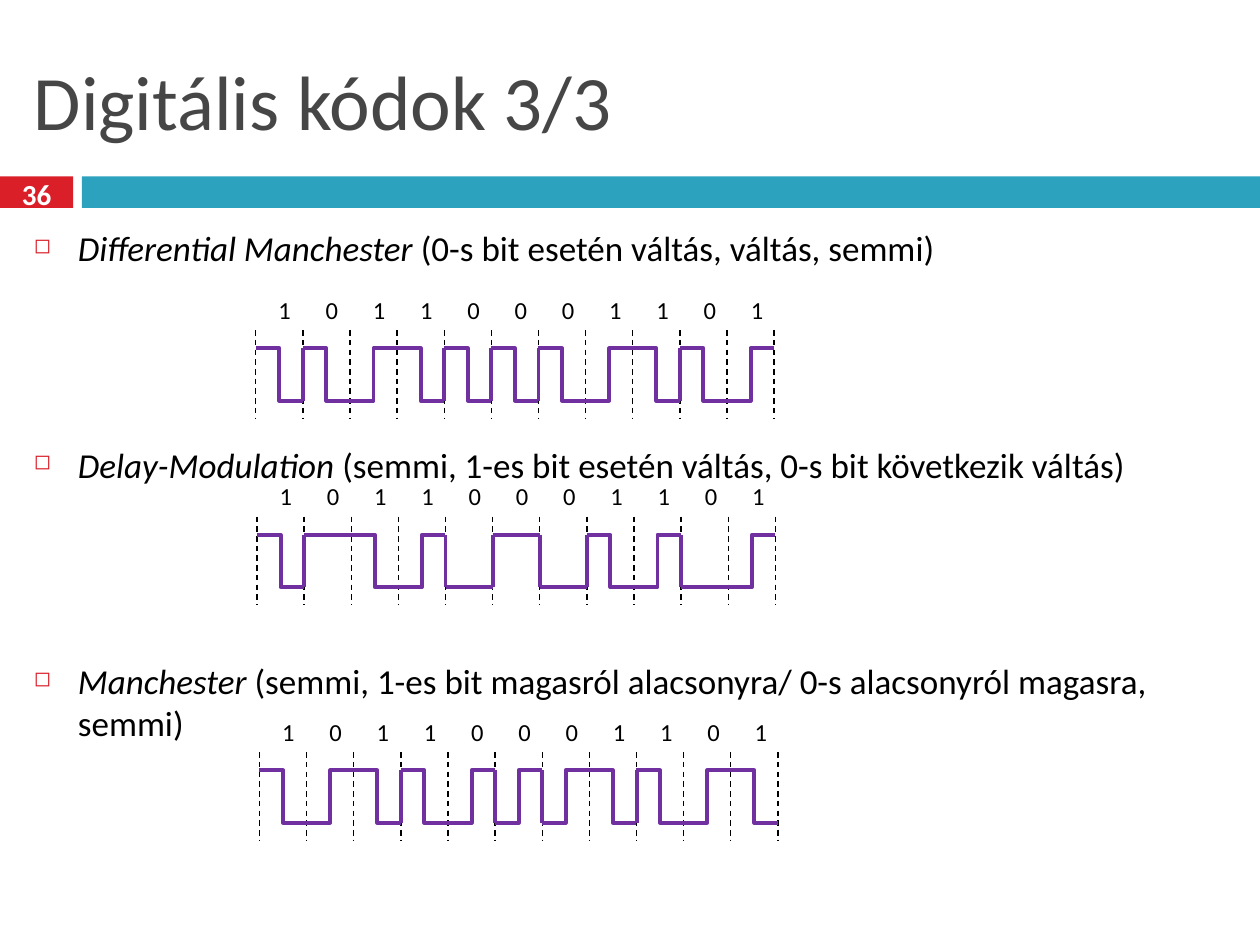
from lxml import etree
from pptx import Presentation
from pptx.dml.color import RGBColor
from pptx.enum.dml import MSO_LINE
from pptx.enum.shapes import MSO_CONNECTOR, MSO_SHAPE
from pptx.enum.text import MSO_ANCHOR, PP_ALIGN
from pptx.oxml.ns import qn
from pptx.util import Inches, Pt

STRAIGHT, ELBOW = MSO_CONNECTOR.STRAIGHT, MSO_CONNECTOR.ELBOW
RECTANGLE = MSO_SHAPE.RECTANGLE
DASH = MSO_LINE.DASH
TOP, MIDDLE = MSO_ANCHOR.TOP, MSO_ANCHOR.MIDDLE
LEFT, CENTER = PP_ALIGN.LEFT, PP_ALIGN.CENTER

BLACK = RGBColor(0x00, 0x00, 0x00)
WHITE = RGBColor(0xFF, 0xFF, 0xFF)
GREY = RGBColor(0x46, 0x46, 0x46)
RED = RGBColor(0xDA, 0x1F, 0x28)
TEAL = RGBColor(0x2D, 0xA2, 0xBF)
PURPLE = RGBColor(0x70, 0x30, 0xA0)

COLUMNS, ROWS = 100, 75
BITS = "10110001101"
BIT_WIDTH = 3.74
HIGH_ROW, LOW_ROW, CLOCK_ROWS = 1.45, 5.6, 6.95

CODES = [
    ("Differential Manchester", " (0-s bit esetén váltás, váltás, semmi)"),
    ("Delay-Modulation", " (semmi, 1-es bit esetén váltás, 0-s bit következik váltás)"),
    ("Manchester", " (semmi, 1-es bit magasról alacsonyra/ 0-s alacsonyról magasra, semmi)"),
]
# Left column, top row, then the level in the first and second half of each bit
SIGNALS = [
    (20.3, 26.2, "HL HL LH HL HL HL HL LH HL HL LH"),
    (20.4, 41.0, "HL HH HL LH LL HH LL HL LH LL LH"),
    (20.6, 59.7, "HL LH HL HL LH LH LH HL HL LH HL"),
]


class SlideBuilder:
    def __init__(self, deck):
        self.slide = deck.slides.add_slide(deck.slide_layouts[6])
        self.column = deck.slide_width / COLUMNS
        self.row = deck.slide_height / ROWS
        self.font = "Calibri"

    def place(self, *lengths):
        """Turn alternating columns and rows into slide units."""
        return [round(n * (self.row if i % 2 else self.column))
                for i, n in enumerate(lengths)]

    def bar(self, left, top, width, height, color):
        bar = self.slide.shapes.add_shape(RECTANGLE, *self.place(left, top, width, height))
        bar.shadow.inherit = False
        bar.fill.solid()
        bar.fill.fore_color.rgb = color
        bar.line.fill.background()

    def text_frame(self, left, top, width, height, anchor=TOP):
        box = self.slide.shapes.add_textbox(*self.place(left, top, width, height))
        box.text_frame.word_wrap = True
        box.text_frame.vertical_anchor = anchor
        return box.text_frame

    def run(self, paragraph, text, size, color=BLACK, bold=False, italic=False):
        run = paragraph.add_run()
        run.text = text
        font = run.font
        font.name, font.size, font.bold, font.italic = self.font, Pt(size), bold, italic
        font.color.rgb = color

    def label(self, box, text, size, color, align=LEFT, bold=False):
        paragraph = self.text_frame(*box, anchor=MIDDLE).paragraphs[0]
        paragraph.alignment = align
        self.run(paragraph, text, size, color, bold)

    def bullets(self, box, items, size, first_gap, gap):
        frame = self.text_frame(*box)
        for index, (name, rule) in enumerate(items):
            paragraph = frame.add_paragraph() if index else frame.paragraphs[0]
            paragraph.space_before = Pt(gap if index else first_gap)
            properties = paragraph._p.get_or_add_pPr()
            indent = round(3.5 * self.column)
            properties.set("marL", str(indent))
            properties.set("indent", str(-indent))
            bullet_color = etree.SubElement(properties, qn("a:buClr"))
            etree.SubElement(bullet_color, qn("a:srgbClr"), val=str(RED))
            etree.SubElement(properties, qn("a:buSzPct"), val="60000")
            etree.SubElement(properties, qn("a:buChar"), char="◻")
            self.run(paragraph, name, size, italic=True)
            self.run(paragraph, rule, size)

    def line(self, start, end, color, width, kind=STRAIGHT, dash=None):
        line = self.slide.shapes.add_connector(kind, *self.place(*start, *end))
        line.line.color.rgb = color
        line.line.width = Pt(width)
        if dash:
            line.line.dash_style = dash
        etree.SubElement(line._element.spPr, qn("a:effectLst"))

    def bit_labels(self, left, top):
        """Write the bits on one line, each centred on its own tab stop."""
        paragraph = self.text_frame(left, top, 44.8, 3.4).paragraphs[0]
        tabs = etree.SubElement(paragraph._p.get_or_add_pPr(), qn("a:tabLst"))
        for index in range(len(BITS)):
            stop = round((1.4 + index * 3.75) * self.column)
            etree.SubElement(tabs, qn("a:tab"), pos=str(stop), algn="ctr")
        self.run(paragraph, "".join("\t" + bit for bit in BITS), 14)

    def signal(self, left, top, levels):
        self.bit_labels(left - 0.1, top - 3.3)
        edges = [left + i * BIT_WIDTH for i in range(len(BITS) + 1)]
        for edge in edges:
            self.line((edge, top), (edge, top + CLOCK_ROWS), BLACK, 0.79, dash=DASH)
        level_rows = {"H": top + HIGH_ROW, "L": top + LOW_ROW}
        previous = None
        for start, end, (first, second) in zip(edges, edges[1:], levels.split()):
            if previous and previous != first:
                self.line((start, level_rows["H"]), (start, level_rows["L"]), PURPLE, 2.25)
            self.line((start, level_rows[first]), (end, level_rows[second]), PURPLE, 2.25,
                      STRAIGHT if first == second else ELBOW)
            previous = second


def main():
    deck = Presentation()
    deck.slide_width, deck.slide_height = Inches(10), Inches(7.5)
    builder = SlideBuilder(deck)
    builder.bar(0, 14, 5.8, 2.5, RED)
    builder.bar(6.5, 14, 93.5, 2.5, TEAL)
    builder.label((1.7, 2.5, 96.7, 10.8), "Digitális kódok 3/3", 44, GREY)
    builder.label((0, 13.7, 5.8, 3.3), "36", 16.6, WHITE, CENTER, bold=True)
    builder.bullets((1.7, 17.5, 96.7, 55.8), CODES, size=20, first_gap=7, gap=99.6)
    for left, top, levels in SIGNALS:
        builder.signal(left, top, levels)
    deck.save("out.pptx")


if __name__ == "__main__":
    main()
